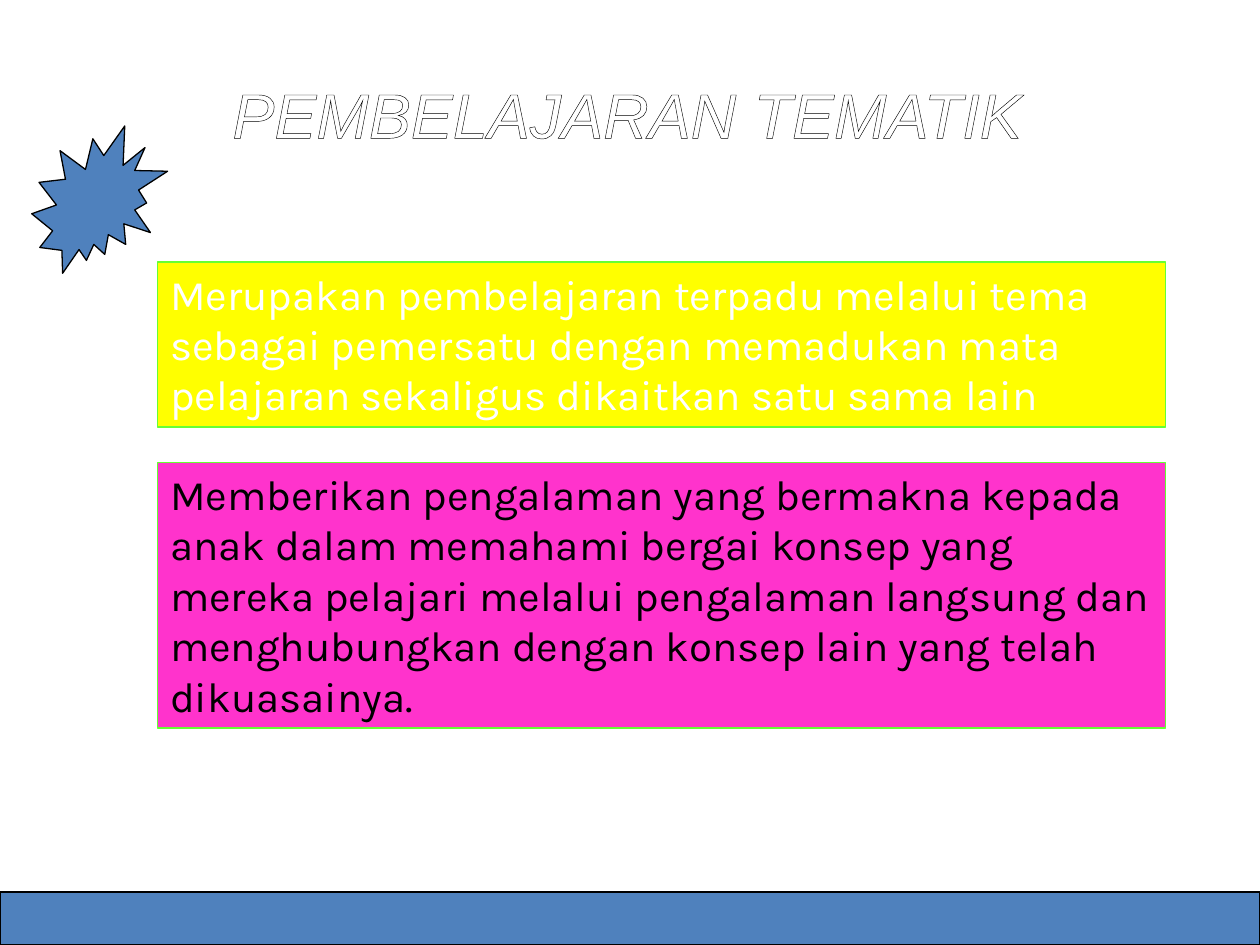
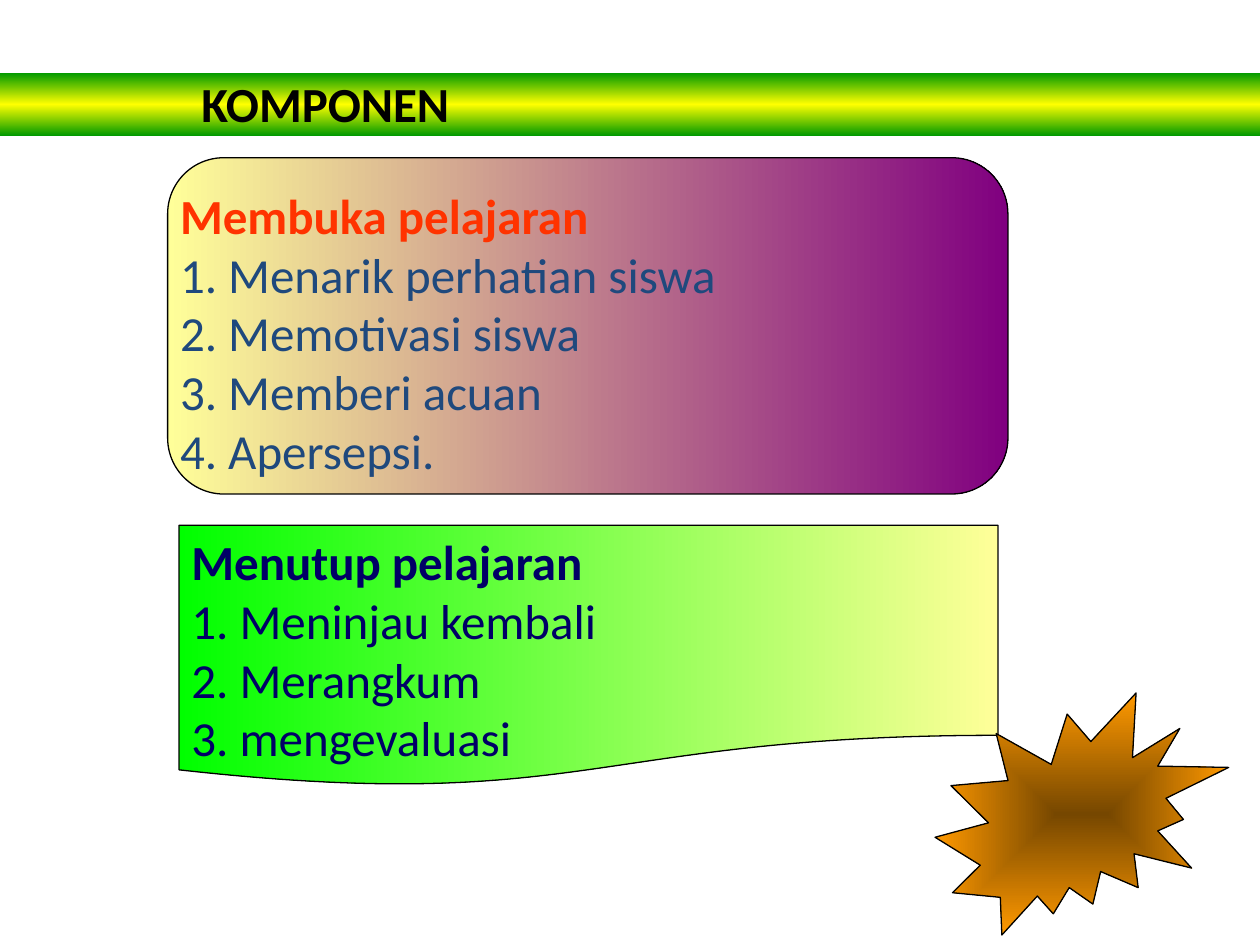
"""Build two slides on thematic learning and the components of a lesson."""
import pptx
import pptx.dml.color
import pptx.enum.shapes
import pptx.enum.text
import pptx.oxml
import pptx.oxml.ns
import pptx.util

Cm = pptx.util.Cm
Pt = pptx.util.Pt
RGB = pptx.dml.color.RGBColor.from_string
KIND = pptx.enum.shapes.MSO_SHAPE
ALIGN = pptx.enum.text.PP_ALIGN
NAMESPACE = pptx.oxml.ns.nsdecls("a")

COLORS = {
    "white": "FFFFFF", "black": "000000", "blue": "4F81BD", "yellow": "FFFF00",
    "pink": "FF33CC", "lime": "66FF33", "cream": "FFFF99", "purple": "800080",
    "green": "00FF00", "leaf": "009900", "brown": "764700", "orange": "FF9900",
    "navy": "000066", "red": "FF3300", "slate": "1F497D",
}
ACROSS = '<a:lin ang="0" scaled="0"/>'
DOWN = '<a:lin ang="5400000" scaled="0"/>'
FROM_CENTRE = ('<a:path path="shape"><a:fillToRect l="50000" t="50000" '
               'r="50000" b="50000"/></a:path>')


def add_figure(page, kind, place, fills, line="black", direction=ACROSS):
    """Add a preset shape with a plain fill, or a gradient if given several colours."""
    figure = page.shapes.add_shape(kind, *[Cm(length) for length in place])
    figure.shadow.inherit = False
    if len(fills) == 1:
        figure.fill.solid()
        figure.fill.fore_color.rgb = RGB(COLORS[fills[0]])
    else:
        step = 100000 // (len(fills) - 1)
        stops = "".join(
            f'<a:gs pos="{index * step}"><a:srgbClr val="{COLORS[name]}"/></a:gs>'
            for index, name in enumerate(fills))
        figure._element.spPr.prstGeom.addnext(pptx.oxml.parse_xml(
            f'<a:gradFill {NAMESPACE} rotWithShape="1">'
            f'<a:gsLst>{stops}</a:gsLst>{direction}</a:gradFill>'))
    if line:
        figure.line.color.rgb = RGB(COLORS[line])
        figure.line.width = Pt(0.75)
    else:
        figure.line.fill.background()
    return figure


def write_lines(box, lines, font, size, align=ALIGN.LEFT):
    """Write one paragraph for each (text, colour, bold) line and return the last run."""
    frame = box.text_frame
    frame.word_wrap = True
    frame.vertical_anchor = pptx.enum.text.MSO_ANCHOR.TOP
    for index, (text, color, bold) in enumerate(lines):
        para = frame.add_paragraph() if index else frame.paragraphs[0]
        para.alignment = align
        span = para.add_run()
        span.text = text
        span.font.name = font
        span.font.size = Pt(size)
        span.font.bold = bold
        span.font.color.rgb = RGB(COLORS[color])
    return span


deck = pptx.Presentation()
deck.slide_width = Cm(25.4)
deck.slide_height = Cm(19.05)
blank = deck.slide_layouts[6]

page = deck.slides.add_slide(blank)
statements = [
    (5.28, 3.33, "yellow", "white",
     "Merupakan pembelajaran terpadu melalui tema sebagai pemersatu dengan "
     "memadukan mata pelajaran sekaligus dikaitkan satu sama lain"),
    (9.32, 5.36, "pink", "black",
     "Memberikan pengalaman yang bermakna kepada anak dalam memahami bergai konsep "
     "yang mereka pelajari melalui pengalaman langsung dan menghubungkan dengan "
     "konsep lain yang telah dikuasainya."),
]
for top, height, fill, color, text in statements:
    panel = add_figure(page, KIND.RECTANGLE, (3.18, top, 20.32, height), [fill], "lime")
    write_lines(panel, [(text, color, False)], "Karla", 24)

title = page.shapes.add_textbox(Cm(3.38), Cm(1.27), Cm(18.54), Cm(2.34))
title.text_frame.margin_top = Cm(0.25)
span = write_lines(title, [("PEMBELAJARAN TEMATIK", "white", False)], "Arial", 36,
                   ALIGN.CENTER)
span.font.italic = True
span.font._element.insert(0, pptx.oxml.parse_xml(
    f'<a:ln {NAMESPACE} w="9525"><a:solidFill>'
    f'<a:srgbClr val="{COLORS["black"]}"/></a:solidFill></a:ln>'))

add_figure(page, KIND.RECTANGLE, (0, 17.98, 25.4, 1.07), ["blue"])
add_figure(page, KIND.EXPLOSION2, (0.64, 2.54, 2.74, 2.97), ["blue"])

page = deck.slides.add_slide(blank)
opening = add_figure(page, KIND.ROUNDED_RECTANGLE, (3.38, 3.18, 16.94, 6.78),
                     ["cream", "purple"])
opening.adjustments[0] = 0.167
add_figure(page, KIND.FLOWCHART_DOCUMENT, (3.61, 10.59, 16.51, 5.28), ["green", "cream"])
add_figure(page, KIND.RECTANGLE, (0, 1.47, 25.4, 1.27), ["leaf", "yellow", "leaf"],
           None, DOWN)

texts = [
    ((3.81, 1.35, 6.6, 1.45), "black", "black", ["KOMPONEN"]),
    ((3.61, 10.59, 16.71, 5), "navy", "navy",
     ["Menutup pelajaran", "1. Meninjau kembali", "2. Merangkum", "3. mengevaluasi"]),
    ((3.38, 3.61, 15.67, 6.2), "red", "slate",
     ["Membuka pelajaran", "1. Menarik perhatian siswa", "2. Memotivasi siswa",
      "3. Memberi acuan", "4. Apersepsi."]),
]
for place, heading_color, item_color, (heading, *items) in texts:
    box = page.shapes.add_textbox(*[Cm(length) for length in place])
    lines = [(heading, heading_color, True)]
    lines += [(item, item_color, False) for item in items]
    write_lines(box, lines, "Calibri", 28)

add_figure(page, KIND.EXPLOSION2, (18.85, 13.97, 5.92, 4.88), ["brown", "orange"],
           direction=FROM_CENTRE)

deck.save("out.pptx")
